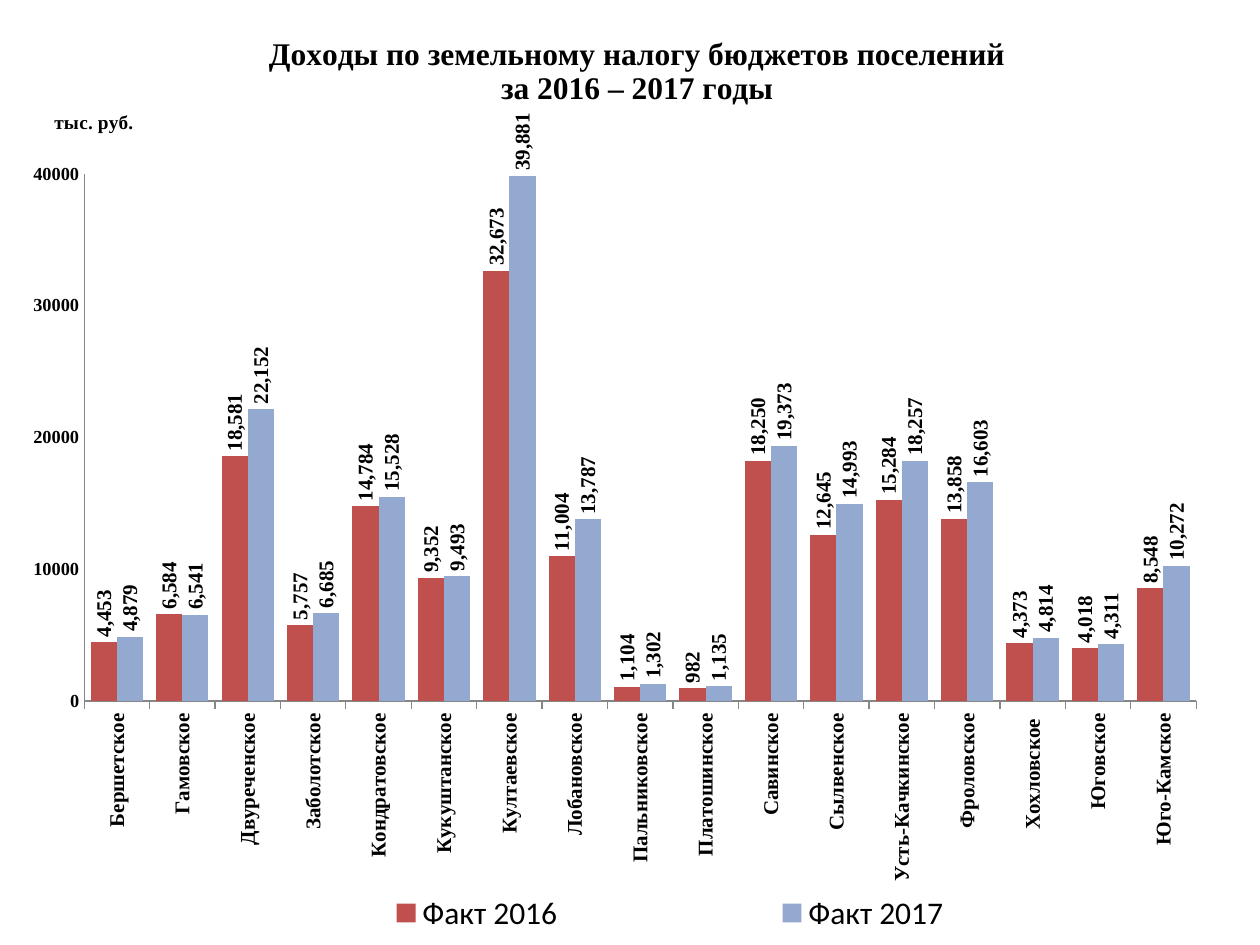
from lxml import etree
from pptx import Presentation
from pptx.chart.data import CategoryChartData
from pptx.dml.color import RGBColor
from pptx.enum.chart import XL_CHART_TYPE, XL_LABEL_POSITION, XL_LEGEND_POSITION, XL_TICK_LABEL_POSITION, XL_TICK_MARK
from pptx.oxml import parse_xml
from pptx.oxml.ns import nsdecls, qn
from pptx.util import Inches, Pt

BLACK = RGBColor(0x00, 0x00, 0x00)
RED = RGBColor(0xC0, 0x50, 0x4D)
BLUE = RGBColor(0x93, 0xA9, 0xCF)
GRAY = RGBColor(0x86, 0x86, 0x86)
SERIF = "Times New Roman"

INCOME = [
    ("Бершетское", 4453, 4879), ("Гамовское", 6584, 6541),
    ("Двуреченское", 18581, 22152), ("Заболотское", 5757, 6685),
    ("Кондратовское", 14784, 15528), ("Кукуштанское", 9352, 9493),
    ("Култаевское", 32673, 39881), ("Лобановское", 11004, 13787),
    ("Пальниковское", 1104, 1302), ("Платошинское", 982, 1135),
    ("Савинское", 18250, 19373), ("Сылвенское", 12645, 14993),
    ("Усть-Качкинское", 15284, 18257), ("Фроловское", 13858, 16603),
    ("Хохловское ", 4373, 4814), ("Юговское", 4018, 4311),
    ("Юго-Камское", 8548, 10272),
]


def set_font(font, size, bold=True, name=SERIF):
    font.size, font.bold, font.name = Pt(size), bold, name
    font.color.rgb = BLACK


def place(element, before, x, y, width=None, height=None, inner=False):
    """Give a chart part a manual layout, in fractions of the chart."""
    for old in element.findall(qn("c:layout")):
        element.remove(old)
    settings = [("layoutTarget", "inner")] if inner else []
    settings += [("xMode", "edge"), ("yMode", "edge"), ("x", x), ("y", y)]
    if width:
        settings += [("w", width), ("h", height)]
    layout = parse_xml(f"<c:layout {nsdecls('c')}><c:manualLayout/></c:layout>")
    for tag, value in settings:
        etree.SubElement(layout[0], qn(f"c:{tag}")).set("val", str(value))
    element.find(qn(before)).addprevious(layout)


presentation = Presentation()
presentation.slide_width, presentation.slide_height = Inches(10), Inches(7.5)
slide = presentation.slides.add_slide(presentation.slide_layouts[6])

# Chart with both years
chart_data = CategoryChartData(number_format="#,##0")
names, fact_2016, fact_2017 = zip(*INCOME)
chart_data.categories = names
chart_data.add_series("Факт 2016", fact_2016)
chart_data.add_series("Факт 2017", fact_2017)
chart = slide.shapes.add_chart(
    XL_CHART_TYPE.COLUMN_CLUSTERED,
    Inches(0.12), Inches(0.03), Inches(9.45), Inches(7.44), chart_data).chart
set_font(chart.font, 10, False, "Calibri")

# Title
title_frame = chart.chart_title.text_frame
title_lines = ["Доходы по земельному налогу бюджетов поселений", "за 2016 – 2017 годы"]
for index, line in enumerate(title_lines):
    paragraph = title_frame.add_paragraph() if index else title_frame.paragraphs[0]
    run = paragraph.add_run()
    run.text = line
    set_font(run.font, 18)
place(chart.chart_title._element, "c:overlay", 0.21, 0.03)

# Columns and their upright value labels
plot = chart.plots[0]
plot.gap_width, plot.overlap, plot.vary_by_categories = 50, 0, False
for series, color in zip(plot.series, (RED, BLUE)):
    series.format.fill.solid()
    series.format.fill.fore_color.rgb = color
    series.invert_if_negative = False
    labels = series.data_labels
    set_font(labels.font, 12)
    labels.show_value = True
    labels.number_format, labels.number_format_is_linked = "#,##0", False
    labels.position = XL_LABEL_POSITION.OUTSIDE_END
    labels._element.find(qn("c:txPr")).find(qn("a:bodyPr")).set("rot", "-5400000")
place(chart._chartSpace.chart.plotArea, "c:barChart", 0.058, 0.182, 0.934, 0.562, inner=True)

# Axes
category_axis, value_axis = chart.category_axis, chart.value_axis
for axis, size, tick in ((category_axis, 12, XL_TICK_MARK.OUTSIDE),
                         (value_axis, 10.5, XL_TICK_MARK.NONE)):
    set_font(axis.tick_labels.font, size)
    axis.major_tick_mark, axis.minor_tick_mark = tick, XL_TICK_MARK.NONE
    axis.has_major_gridlines = False
    axis.format.line.color.rgb = GRAY
    axis.format.line.width = Pt(0.75)
category_axis.tick_label_position = XL_TICK_LABEL_POSITION.LOW
category_axis._element.find(qn("c:txPr")).find(qn("a:bodyPr")).set("rot", "-5400000")
value_axis.minimum_scale, value_axis.maximum_scale, value_axis.major_unit = 0, 40000, 10000
value_axis.tick_labels.number_format = "0"
value_axis.tick_labels.number_format_is_linked = False

# Unit above the value axis
unit_frame = value_axis.axis_title.text_frame
run = unit_frame.paragraphs[0].add_run()
run.text = "тыс. руб."
set_font(run.font, 11)
unit_body = unit_frame._txBody.find(qn("a:bodyPr"))
unit_body.set("rot", "0")
unit_body.set("vert", "horz")
place(value_axis.axis_title._element, "c:overlay", 0.03, 0.11)

# Legend under the chart
chart.has_legend = True
chart.legend.position = XL_LEGEND_POSITION.RIGHT
chart.legend.include_in_layout = False
set_font(chart.legend.font, 18, False, "Calibri")
place(chart.legend._element, "c:overlay", 0.14, 0.94, 0.82, 0.06)

presentation.save("out.pptx")
